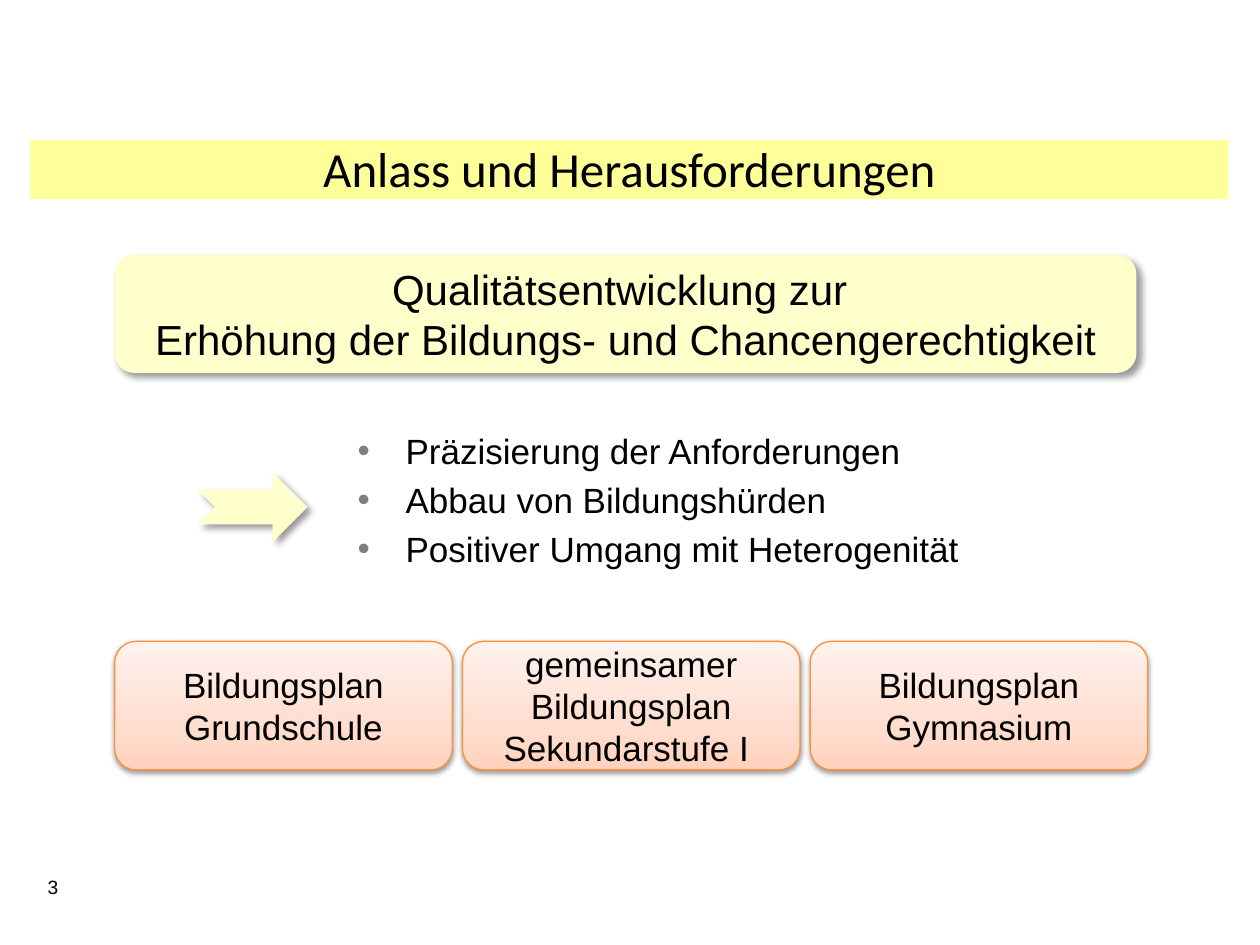
from dataclasses import dataclass

from lxml import etree
from pptx import Presentation
from pptx.dml.color import RGBColor
from pptx.enum.shapes import MSO_SHAPE
from pptx.enum.text import MSO_ANCHOR, PP_ALIGN
from pptx.oxml import parse_xml
from pptx.oxml.ns import nsdecls, qn
from pptx.util import Inches, Pt

RECT = MSO_SHAPE.RECTANGLE
ROUND = MSO_SHAPE.ROUNDED_RECTANGLE
ARROW = MSO_SHAPE.NOTCHED_RIGHT_ARROW
LEFT, CENTER = PP_ALIGN.LEFT, PP_ALIGN.CENTER
TOP, MIDDLE = MSO_ANCHOR.TOP, MSO_ANCHOR.MIDDLE


@dataclass(frozen=True)
class Theme:
    ink: str = "000000"
    band: str = "FFFF99"
    cream: str = "FFFFCC"
    dot: str = "7F7F7F"
    edge: str = "F69240"
    fade: tuple = ((0, "FFD2BD"), (35, "FFDED0"), (100, "FFF2ED"))
    head: str = "Calibri"
    body: str = "Arial"
    title: int = 28
    lead: int = 24
    text: int = 20
    note: int = 11


@dataclass(frozen=True)
class Box:
    left: float
    top: float
    width: float
    height: float

    def frame(self) -> list:
        return [Inches(v) for v in (self.left, self.top, self.width, self.height)]


@dataclass(frozen=True)
class Shade:
    alpha: int
    blur: float
    dist: float
    angle: int


THEME = Theme()
SOFT = Shade(40, 4, 3, 45)
DROP = Shade(38, 3.1, 1.6, 90)
POINTS = (
    "Präzisierung der Anforderungen",
    "Abbau von Bildungshürden",
    "Positiver Umgang mit Heterogenität",
)
PLANS = (
    ("Bildungsplan Grundschule",),
    ("gemeinsamer Bildungsplan Sekundarstufe I ",),
    ("Bildungsplan", "Gymnasium"),
)


def apply(target, values: dict) -> None:
    for name, value in values.items():
        setattr(target, name, value)


def write(shape, lines: tuple, size: int, font: str = THEME.body,
          align=CENTER, anchor=MIDDLE) -> None:
    frame = shape.text_frame
    apply(frame, {"word_wrap": True, "vertical_anchor": anchor})
    frame.text = "\n".join(lines)
    for para in frame.paragraphs:
        para.alignment = align
        for run in para.runs:
            apply(run.font, {"name": font, "size": Pt(size), "bold": False})
            run.font.color.rgb = RGBColor.from_string(THEME.ink)


def shade(shape, look: Shade) -> None:
    effects = shape.element.spPr.find(qn("a:effectLst"))
    outer = etree.SubElement(effects, qn("a:outerShdw"), {
        "blurRad": str(Pt(look.blur)), "dist": str(Pt(look.dist)),
        "dir": str(look.angle * 60000), "algn": "tl", "rotWithShape": "0"})
    color = etree.SubElement(outer, qn("a:srgbClr"), val=THEME.ink)
    etree.SubElement(color, qn("a:alpha"), val=str(look.alpha * 1000))


def fade(shape) -> None:
    stops = "".join(
        f'<a:gs pos="{pos * 1000}"><a:srgbClr val="{color}"/></a:gs>'
        for pos, color in THEME.fade)
    fill = parse_xml(
        f'<a:gradFill {nsdecls("a")} rotWithShape="1"><a:gsLst>{stops}</a:gsLst>'
        '<a:lin ang="16200000" scaled="0"/></a:gradFill>')
    shape.element.spPr.find(qn("a:ln")).addprevious(fill)


def draw(slide, kind, box: Box, color: str):
    shape = slide.shapes.add_shape(kind, *box.frame())
    shape.shadow.inherit = False
    shape.fill.solid()
    shape.fill.fore_color.rgb = RGBColor.from_string(color)
    shape.line.fill.background()
    return shape


def plan(slide, box: Box, lines: tuple) -> None:
    shape = slide.shapes.add_shape(ROUND, *box.frame())
    shape.shadow.inherit = False
    shape.line.color.rgb = RGBColor.from_string(THEME.edge)
    shape.line.width = Pt(0.75)
    fade(shape)
    shade(shape, DROP)
    write(shape, lines, THEME.text)


def points(slide, box: Box) -> None:
    shape = slide.shapes.add_textbox(*box.frame())
    write(shape, POINTS, THEME.text, align=LEFT, anchor=TOP)
    indent = Inches(0.38)
    for i, para in enumerate(shape.text_frame.paragraphs):
        para.space_before = Pt(4 if i else 0)
        props = para._p.get_or_add_pPr()
        apply_xml = {"marL": str(indent), "indent": str(-indent)}
        for name, value in apply_xml.items():
            props.set(name, value)
        color = etree.SubElement(props, qn("a:buClr"))
        etree.SubElement(color, qn("a:srgbClr"), val=THEME.dot)
        etree.SubElement(props, qn("a:buFont"), typeface=THEME.body)
        etree.SubElement(props, qn("a:buChar"), char="•")


def heading(slide) -> None:
    title = slide.shapes.title
    left, top, width, height = Box(0.24, 1.05, 9.51, 0.57).frame()
    apply(title, {"left": left, "top": top, "width": width, "height": height})
    write(title, ("Anlass und Herausforderungen",), THEME.title, THEME.head, anchor=TOP)
    band = draw(slide, RECT, Box(0.24, 1.11, 9.51, 0.47), THEME.band)
    title.element.addprevious(band.element)


def main() -> None:
    deck = Presentation()
    apply(deck, {"slide_width": Inches(10), "slide_height": Inches(7.5)})
    slide = deck.slides.add_slide(deck.slide_layouts[5])
    heading(slide)
    points(slide, Box(2.74, 3.36, 6.61, 1.26))
    shade(draw(slide, ARROW, Box(1.57, 3.75, 0.87, 0.55), THEME.cream), SOFT)
    page = slide.shapes.add_textbox(*Box(0.28, 6.9, 0.55, 0.29).frame())
    write(page, ("3",), THEME.note, align=LEFT, anchor=TOP)
    goal = draw(slide, ROUND, Box(0.91, 2.02, 8.11, 0.94), THEME.cream)
    shade(goal, SOFT)
    write(goal, ("Qualitätsentwicklung zur ",
                 "Erhöhung der Bildungs- und Chancengerechtigkeit"), THEME.lead)
    width, gap = 2.68, 0.08
    for i, lines in enumerate(PLANS):
        plan(slide, Box(0.91 + i * (width + gap), 5.09, width, 1.02), lines)
    deck.save("out.pptx")


if __name__ == "__main__":
    main()
